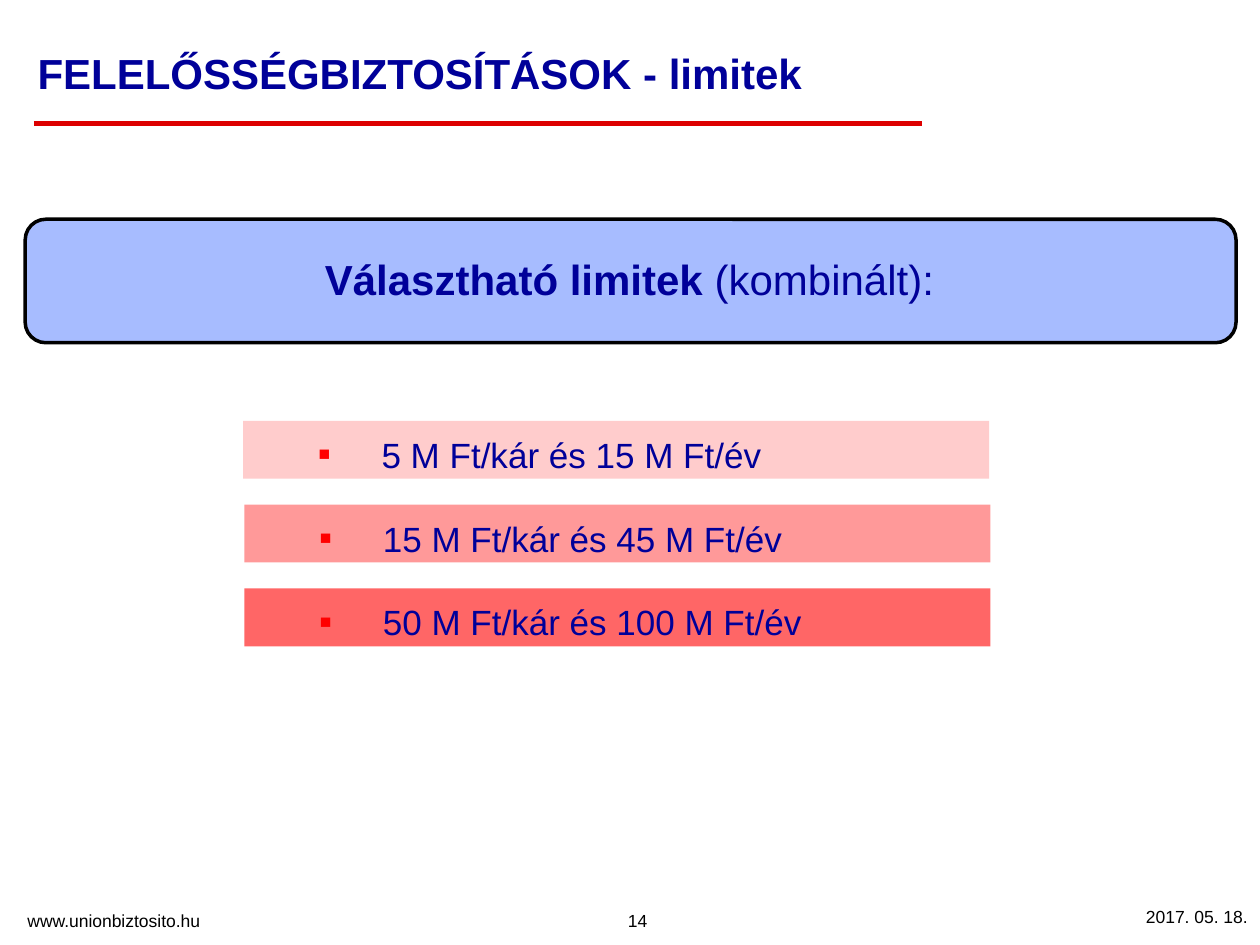
from dataclasses import dataclass
from typing import Any

import pptx
import pptx.dml.color
import pptx.enum.shapes
import pptx.enum.text
import pptx.oxml
import pptx.oxml.ns
import pptx.util

Inches = pptx.util.Inches
Align = pptx.enum.text.PP_ALIGN
Anchor = pptx.enum.text.MSO_ANCHOR
Shape = pptx.enum.shapes.MSO_SHAPE


@dataclass(frozen=True)
class Theme:
    face: str = "Arial"
    navy: str = "000099"
    black: str = "000000"
    rule: str = "DD0000"
    mark: str = "FF0000"
    panel: str = "A7BCFF"
    head: int = 24
    body: int = 20
    foot: int = 10


@dataclass(frozen=True)
class Box:
    left: float
    top: float
    width: float
    height: float

    def place(self) -> tuple:
        return tuple(Inches(n) for n in (self.left, self.top, self.width, self.height))


@dataclass(frozen=True)
class Label:
    box: Box
    runs: tuple[tuple[str, bool], ...]
    size: int
    color: str
    align: Any = Align.LEFT
    anchor: Any = Anchor.TOP
    pitch: float = 1.0
    inset: float = 0.05


@dataclass(frozen=True)
class Limit:
    text: str
    fill: str
    left: float


THEME = Theme()
PANEL = Box(0.2, 1.74, 9.61, 0.98)
BAR_TOP, BAR_STEP = 3.34, 0.665
LIMITS = (
    Limit("5 M Ft/kár és 15 M Ft/év", "FFCCCC", 1.93),
    Limit("15 M Ft/kár és 45 M Ft/év", "FF9999", 1.94),
    Limit("50 M Ft/kár és 100 M Ft/év", "FF6666", 1.94),
)
FEET = (
    Label(Box(3.45, 6.9, 3.22, 0.54), (("14", False),), THEME.foot, THEME.black,
          Align.CENTER, Anchor.BOTTOM),
    Label(Box(0.12, 7.17, 2.6, 0.27), (("www.unionbiztosito.hu", False),),
          THEME.foot, THEME.black),
    Label(Box(8.15, 7.14, 1.85, 0.27), (("2017. 05. 18.", False),),
          THEME.foot, THEME.black, Align.RIGHT),
)
TITLE = Label(Box(0.2, 0.28, 7.12, 0.67),
              (("FELELŐSSÉGBIZTOSÍTÁSOK - limitek", True),),
              THEME.head, THEME.navy, anchor=Anchor.MIDDLE, pitch=0.8)
INTRO = Label(Box(0.24, 1.79, 9.51, 0.89),
              (("Választható limitek", True), (" (kombinált):", False)),
              THEME.head, THEME.navy, Align.CENTER, Anchor.MIDDLE, 0.9, 0.1)


def tint(code: str) -> Any:
    return pptx.dml.color.RGBColor.from_string(code)


def apply(target: Any, form: dict[str, Any]) -> None:
    for name, value in form.items():
        setattr(target, name, value)


def write(shape: Any, label: Label) -> Any:
    """Fill the shape's frame with the label and return its paragraph."""
    frame = shape.text_frame
    apply(frame, {
        "word_wrap": True, "vertical_anchor": label.anchor,
        "margin_left": Inches(0.1), "margin_right": Inches(0.1),
        "margin_top": Inches(label.inset), "margin_bottom": Inches(label.inset),
    })
    para = frame.paragraphs[0]
    apply(para, {"alignment": label.align, "line_spacing": label.pitch})
    for text, bold in label.runs:
        run = para.add_run()
        run.text = text
        apply(run.font, {"name": THEME.face, "size": pptx.util.Pt(label.size),
                         "bold": bold})
        run.font.color.rgb = tint(label.color)
    return para


def add_label(shapes: Any, label: Label) -> None:
    write(shapes.add_textbox(*label.box.place()), label)


def add_block(shapes: Any, kind: Any, box: Box, fill: str) -> Any:
    shape = shapes.add_shape(kind, *box.place())
    shape.shadow.inherit = False
    shape.fill.solid()
    shape.fill.fore_color.rgb = tint(fill)
    shape.line.fill.background()
    return shape


def add_mark(para: Any) -> None:
    """Give the paragraph a small square bullet with a hanging indent."""
    props = para._p.get_or_add_pPr()
    props.set("marL", str(Inches(1)))
    props.set("indent", str(Inches(-0.5)))
    space = pptx.oxml.ns.nsdecls("a")
    for xml in (
        f'<a:buClr {space}><a:srgbClr val="{THEME.mark}"/></a:buClr>',
        f'<a:buSzPct {space} val="55000"/>',
        f'<a:buFont {space} typeface="{THEME.face}"/>',
        f'<a:buChar {space} char="■"/>',
    ):
        props.append(pptx.oxml.parse_xml(xml))


def add_limit(shapes: Any, limit: Limit, row: int) -> None:
    box = Box(limit.left, BAR_TOP + row * BAR_STEP, 5.92, 0.46)
    bar = add_block(shapes, Shape.RECTANGLE, box, limit.fill)
    label = Label(box, ((limit.text, False),), THEME.body, THEME.navy, pitch=1.15)
    add_mark(write(bar, label))


def add_rule(shapes: Any) -> None:
    rule = shapes.add_connector(pptx.enum.shapes.MSO_CONNECTOR.STRAIGHT,
                                Inches(0.27), Inches(0.98), Inches(7.32), Inches(0.98))
    rule.line.color.rgb = tint(THEME.rule)
    rule.line.width = pptx.util.Pt(2.5)
    rule._element.spPr.append(pptx.oxml.parse_xml(
        f'<a:effectLst {pptx.oxml.ns.nsdecls("a")}/>'))


def add_panel(shapes: Any) -> None:
    group = shapes.add_group_shape().shapes
    panel = add_block(group, Shape.ROUNDED_RECTANGLE, PANEL, THEME.panel)
    panel.line.color.rgb = tint(THEME.black)
    panel.line.width = pptx.util.Pt(2)
    add_label(group, INTRO)


def main() -> None:
    deck = pptx.Presentation()
    apply(deck, {"slide_width": Inches(10), "slide_height": Inches(7.5)})
    shapes = deck.slides.add_slide(deck.slide_layouts[6]).shapes
    for foot in FEET:
        add_label(shapes, foot)
    add_rule(shapes)
    add_label(shapes, TITLE)
    add_panel(shapes)
    for row, limit in enumerate(LIMITS):
        add_limit(shapes, limit, row)
    deck.save("out.pptx")


if __name__ == "__main__":
    main()
